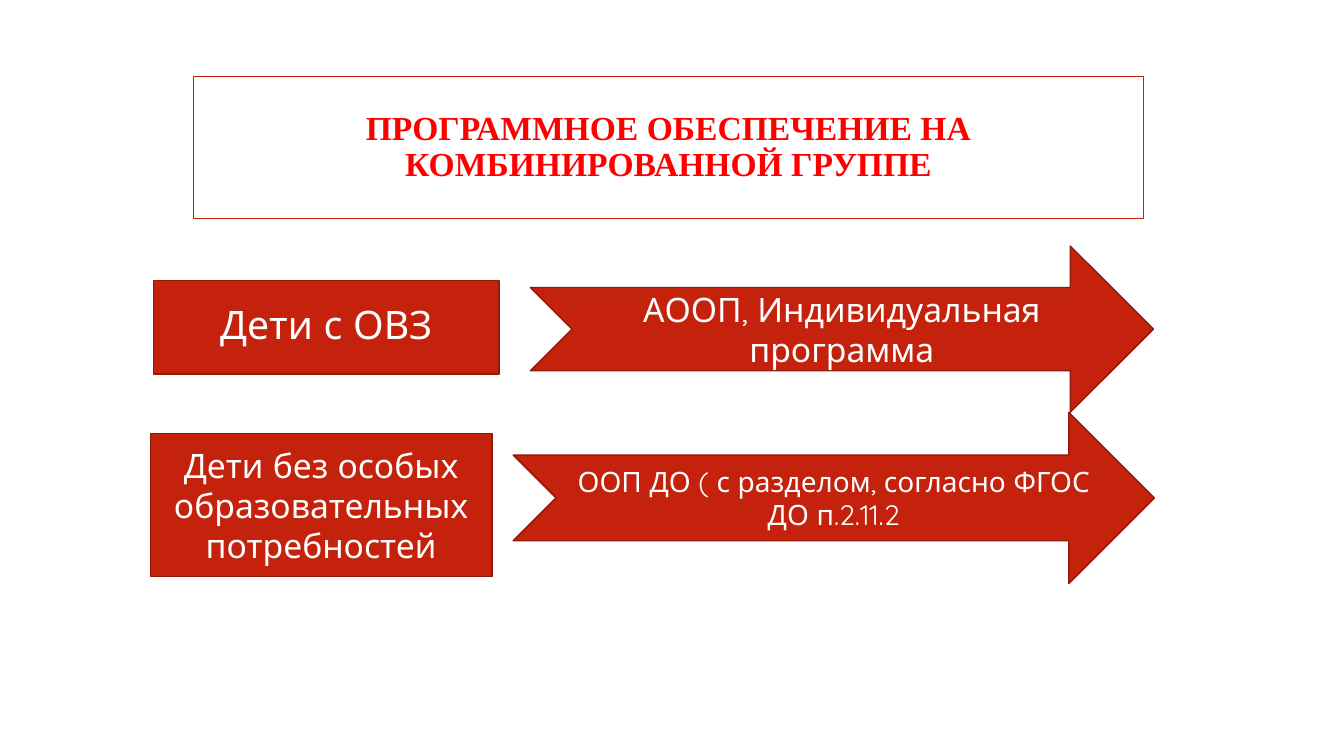
from lxml.etree import SubElement
from pptx import Presentation
from pptx.dml.color import RGBColor
from pptx.enum.shapes import MSO_SHAPE
from pptx.enum.text import MSO_ANCHOR, MSO_AUTO_SIZE, PP_ALIGN
from pptx.oxml.ns import qn
from pptx.util import Inches, Pt

RED, DARK_RED, BRIGHT_RED, WHITE = "C4220D", "91190A", "FF0000", "FFFFFF"


def color(hex_text):
    return RGBColor.from_string(hex_text)


def place(shape, box):
    shape.left, shape.top, shape.width, shape.height = map(Inches, box)


def paint(shape, fill, line):
    shape.fill.solid()
    shape.fill.fore_color.rgb = color(fill)
    shape.line.color.rgb = color(line)
    shape.line.width = Pt(1)


def write(shape, text, size, font="Quicksand", ink=WHITE, bold=False,
          spacing=1.0, plain=False):
    """Centre the text in the shape; plain removes an inherited bullet."""
    frame = shape.text_frame
    frame.word_wrap = True
    frame.auto_size = MSO_AUTO_SIZE.NONE
    frame.vertical_anchor = MSO_ANCHOR.MIDDLE
    para = frame.paragraphs[0]
    para.alignment = PP_ALIGN.CENTER
    para.line_spacing = spacing
    para.space_before = Pt(0)
    if plain:
        properties = para._p.get_or_add_pPr()
        properties.set("marL", "0")
        properties.set("indent", "0")
        SubElement(properties, qn("a:buNone"))
    span = para.add_run()
    span.text = text
    span.font.name = font
    span.font.size = Pt(size)
    span.font.bold = bold
    span.font.color.rgb = color(ink)


def add_title(page, box):
    title = page.shapes.title
    place(title, box)
    paint(title, WHITE, RED)
    write(title, "ПРОГРАММНОЕ ОБЕСПЕЧЕНИЕ НА КОМБИНИРОВАННОЙ ГРУППЕ", 24,
          font="Times New Roman", ink=BRIGHT_RED, bold=True, spacing=0.9)


def add_group_placeholder(page, box, text, size):
    body = page.placeholders[1]
    place(body, box)
    paint(body, RED, DARK_RED)
    write(body, text, size, spacing=0.9, plain=True)


def add_block(page, kind, box, text, size):
    block = page.shapes.add_shape(kind, *map(Inches, box))
    block.shadow.inherit = False
    paint(block, RED, DARK_RED)
    write(block, text, size)


def main():
    deck = Presentation()
    deck.slide_width, deck.slide_height = Inches(13.33), Inches(7.5)
    page = deck.slides.add_slide(deck.slide_layouts[1])
    arrow = MSO_SHAPE.NOTCHED_RIGHT_ARROW

    add_title(page, (1.92, 0.76, 9.42, 1.41))
    add_group_placeholder(page, (1.52, 2.78, 3.43, 0.93), "Дети с ОВЗ", 28)
    add_block(page, arrow, (5.26, 2.44, 6.18, 1.65),
              "АООП, Индивидуальная программа", 24)
    add_block(page, MSO_SHAPE.RECTANGLE, (1.49, 4.3, 3.39, 1.42),
              "Дети без особых образовательных потребностей", 24)
    add_block(page, arrow, (5.09, 4.09, 6.36, 1.7),
              "ООП ДО ( с разделом, согласно ФГОС ДО п.2.11.2", 20)
    deck.save("out.pptx")


if __name__ == "__main__":
    main()
